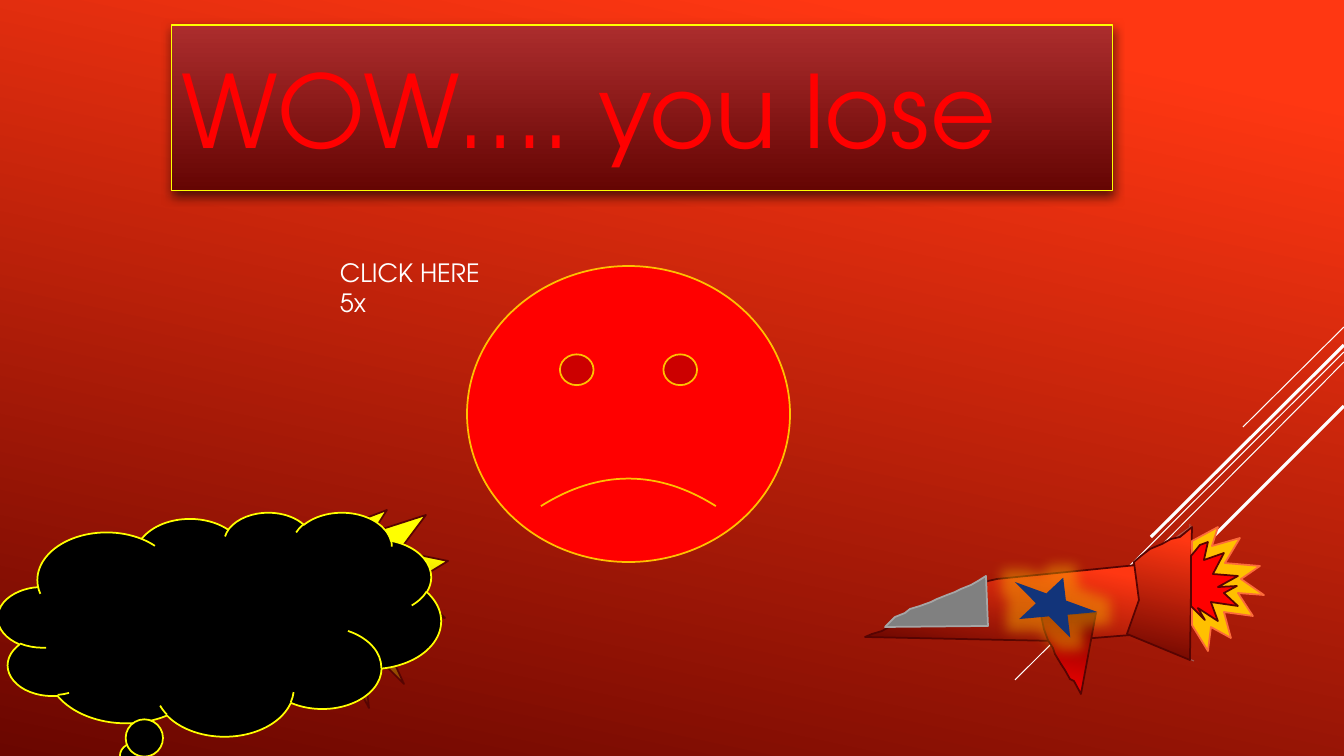
from lxml.etree import SubElement
from pptx import Presentation
from pptx.dml.color import RGBColor
from pptx.enum.shapes import MSO_CONNECTOR as Connector, MSO_SHAPE as Preset
from pptx.enum.text import MSO_ANCHOR as Anchor, PP_ALIGN as Align
from pptx.oxml.ns import qn
from pptx.util import Emu, Pt

COLORS = {
    "white": "FFFFFF", "black": "000000", "red": "FF0000", "yellow": "FFFF00",
    "gold": "FFC000", "orange": "FC6B3A", "scarlet": "FF3712", "maroon": "6A0600",
    "outline": "570402", "banner_top": "AC2D2D", "banner_bottom": "650503",
    "navy": "12347A", "gray": "808080", "silver": "A6A6A6", "seam": "A58989",
}
SKY = ((10, "scarlet"), (100, "maroon"))

STREAKS = [
    ((1344, 327), (1243, 427), 0.75),
    ((1344, 352), (1015, 680), 0.75),
    ((1344, 362), (1135, 572), 0.75),
    ((1344, 345), (1151, 537), 2.25),
    ((1344, 406), (1204, 546), 2.25),
]
SEAMS = [
    ((1137, 565), (1192, 526)),
    ((1131, 635), (1194, 661)),
    ((1190, 657), (1190, 524)),
]
LEFT_BURST = [
    (329, 533), (340, 530), (353, 523), (366, 518), (387, 510), (373, 532), (426, 515),
    (399, 551), (448, 561), (412, 583), (445, 618), (402, 609), (426, 644), (378, 627),
    (404, 684), (362, 642), (369, 708), (332, 638), (327, 597),
]
FUSELAGE = [
    (997, 579), (988, 581), (980, 584), (970, 587), (962, 590), (955, 593), (944, 598),
    (936, 601), (926, 607), (916, 611), (909, 616), (899, 621), (889, 627), (882, 631),
    (872, 634), (865, 637), (1057, 641), (1131, 635), (1141, 597), (1137, 565),
]
NOZZLE = [
    (1134, 562), (1141, 556), (1150, 549), (1162, 544), (1171, 539), (1180, 537),
    (1192, 527), (1190, 660), (1127, 634), (1139, 600),
]
NOSE = [
    (986, 576), (978, 581), (971, 585), (961, 589), (955, 592), (947, 595), (937, 599),
    (931, 602), (920, 606), (910, 609), (905, 613), (895, 617), (888, 624), (885, 627),
    (988, 626),
]
FIN = [
    (1041, 615), (1044, 629), (1048, 640), (1053, 648), (1055, 654), (1061, 664),
    (1065, 670), (1070, 679), (1074, 681), (1081, 694), (1096, 613),
]
FLAME = [
    (1192, 541), (1218, 527), (1212, 546), (1240, 538), (1225, 563), (1260, 566),
    (1241, 579), (1264, 595), (1238, 593), (1253, 616), (1224, 612), (1231, 638),
    (1211, 627), (1208, 651), (1192, 625),
]
FLAME_CORE = [
    (1191, 556), (1196, 550), (1200, 545), (1208, 542), (1204, 560), (1224, 553),
    (1213, 574), (1238, 576), (1218, 587), (1237, 586), (1224, 593), (1238, 606),
    (1211, 602), (1218, 621), (1198, 608), (1205, 620), (1191, 606),
]
ROCKET = [
    (FUSELAGE, SKY, "outline"),
    (NOZZLE, SKY, "outline"),
    (NOSE, "gray", "silver"),
    (FIN, ((0, "maroon"), (100, "red")), "outline"),
    (FLAME, "gold", "orange"),
    (FLAME_CORE, "red", "outline"),
]


def rgb(name):
    return RGBColor.from_string(COLORS[name])


def set_text(shape, text, size, color, font="TeX Gyre Adventor", anchor=Anchor.TOP):
    frame = shape.text_frame
    frame.word_wrap = True
    frame.vertical_anchor = anchor
    paragraph = frame.paragraphs[0]
    paragraph.alignment = Align.LEFT
    run = paragraph.add_run()
    run.text = text
    run.font.name = font
    run.font.size = Pt(size)
    run.font.color.rgb = rgb(color)


class SlideBuilder:
    """Draws styled elements on one slide, measured in px."""

    scale = 914400 / 100.8

    def __init__(self, presentation):
        presentation.slide_width = self.emu(1344)
        presentation.slide_height = self.emu(756)
        self.slide = presentation.slides.add_slide(presentation.slide_layouts[6])
        self.shapes = self.slide.shapes

    def emu(self, px):
        return Emu(round(px * self.scale))

    def box(self, *lengths):
        return [self.emu(length) for length in lengths]

    def paint(self, fill, paint, angle=102):
        if isinstance(paint, str):
            fill.solid()
            fill.fore_color.rgb = rgb(paint)
            return
        fill.gradient()
        fill.gradient_angle = 360 - angle
        for stop, (position, color) in zip(fill.gradient_stops, paint):
            stop.position = position / 100
            stop.color.rgb = rgb(color)

    def style(self, shape, fill, line, width=1.25, angle=102):
        self.paint(shape.fill, fill, angle)
        if line:
            shape.line.color.rgb = rgb(line)
            shape.line.width = Pt(width)
        else:
            shape.line.fill.background()
        shape.shadow.inherit = False
        return shape

    def effect(self, shape, kind, color, alpha, **attributes):
        effects = shape._element.spPr.find(qn("a:effectLst"))
        values = {key: str(value) for key, value in attributes.items()}
        element = SubElement(effects, qn(f"a:{kind}"), values)
        tint = SubElement(element, qn("a:srgbClr"), val=COLORS[color])
        SubElement(tint, qn("a:alpha"), val=str(alpha * 1000))

    def preset(self, kind, bounds, fill, line, rotation=0, **style):
        shape = self.shapes.add_shape(kind, *self.box(*bounds))
        shape.rotation = rotation
        return self.style(shape, fill, line, **style)

    def outline(self, points, fill, line):
        builder = self.shapes.build_freeform(*points[0], scale=self.scale)
        builder.add_line_segments(points[1:], close=True)
        return self.style(builder.convert_to_shape(), fill, line)

    def line(self, start, end, color, width=0.75, alpha=100):
        connector = self.shapes.add_connector(Connector.STRAIGHT, *self.box(*start, *end))
        connector.line.color.rgb = rgb(color)
        connector.line.width = Pt(width)
        properties = connector._element.spPr
        if alpha < 100:
            tint = next(properties.iter(qn("a:srgbClr")))
            SubElement(tint, qn("a:alpha"), val=str(alpha * 1000))
        SubElement(properties, qn("a:effectLst"))

    def text(self, bounds, text, **text_format):
        set_text(self.shapes.add_textbox(*self.box(*bounds)), text, **text_format)


def main():
    presentation = Presentation()
    builder = SlideBuilder(presentation)
    builder.paint(builder.slide.background.fill, SKY)
    for start, end, width in STREAKS:
        builder.line(start, end, "white", width)

    banner = builder.preset(Preset.RECTANGLE, (172, 25, 941, 166),
                            ((0, "banner_top"), (100, "banner_bottom")), "yellow",
                            width=0.75, angle=90)
    builder.effect(banner, "outerShdw", "black", 60,
                   blurRad=Pt(8), dist=Pt(3), dir=5400000, rotWithShape=0)
    set_text(banner, "WOW…. you lose", size=72, color="red", anchor=Anchor.MIDDLE)

    face = builder.preset(Preset.SMILEY_FACE, (467, 266, 323, 296), "red", "gold")
    face.adjustments[0] = -0.047

    builder.outline(LEFT_BURST, ((21, "yellow"), (100, "maroon")), "outline")
    for start, end in SEAMS:
        builder.line(start, end, "seam", alpha=60)
    for points, fill, line in ROCKET:
        builder.outline(points, fill, line)
    star = builder.preset(Preset.STAR_5_POINT, (1010, 576, 88, 54), "navy", None, rotation=20)
    builder.effect(star, "glow", "gold", 40, rad=Pt(18))

    builder.preset(Preset.CLOUD_CALLOUT, (-2, 512, 443, 224), "black", "yellow")
    builder.text((330, 252, 167, 72), "CLICK HERE 5x", size=18, color="white")
    presentation.save("out.pptx")


if __name__ == "__main__":
    main()
